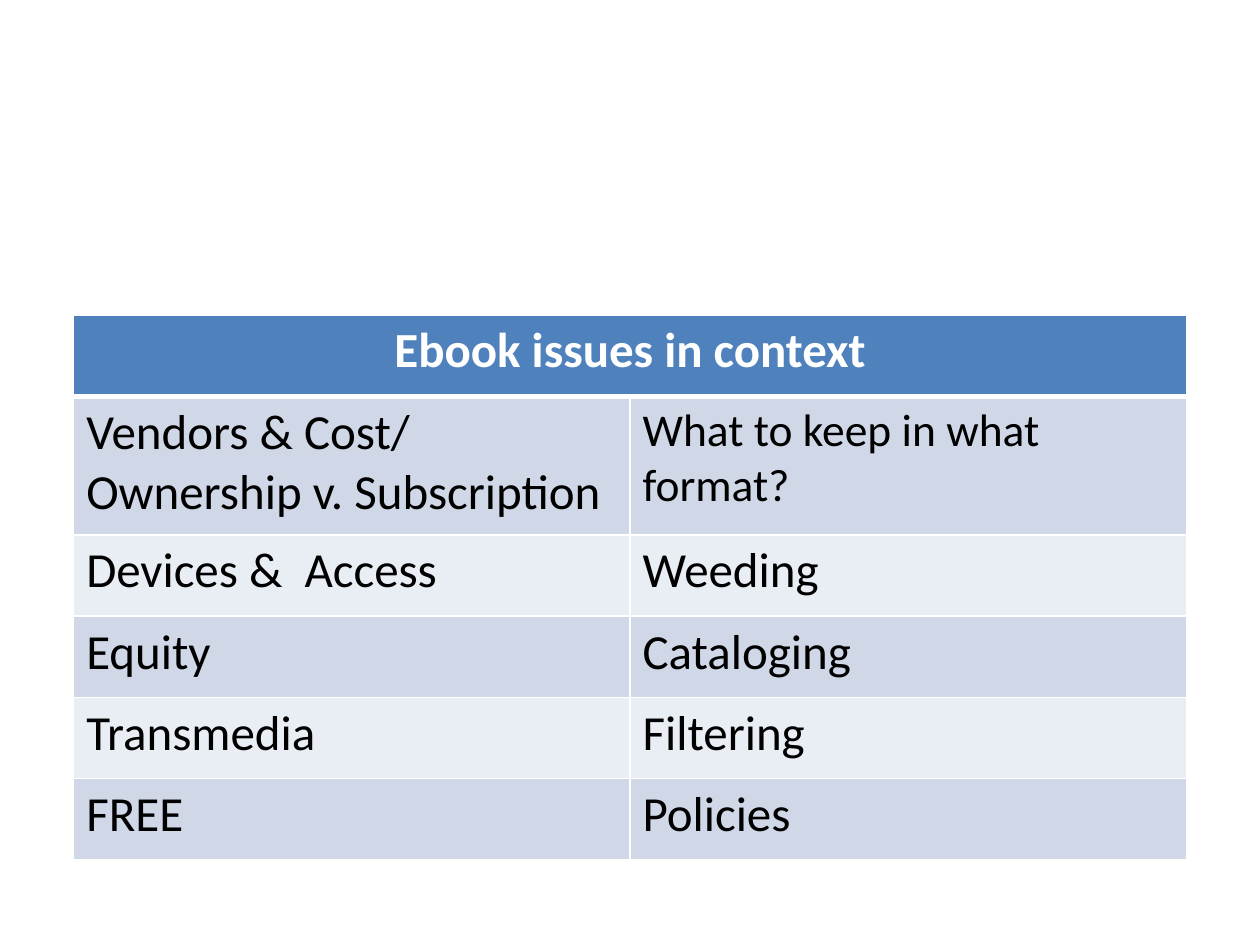
from dataclasses import dataclass

from lxml.etree import SubElement
from pptx import Presentation
from pptx.dml.color import RGBColor
from pptx.enum.text import PP_ALIGN as Align
from pptx.oxml.ns import qn
from pptx.table import _Cell as Cell
from pptx.util import Inches, Pt

WHITE = RGBColor(0xFF, 0xFF, 0xFF)
BLACK = RGBColor(0x00, 0x00, 0x00)
HEADER_BLUE = RGBColor(0x4F, 0x81, 0xBD)
BANDS = (RGBColor(0xD0, 0xD8, 0xE8), RGBColor(0xE9, 0xED, 0xF4))


@dataclass(frozen=True)
class Issue:
    text: str
    size: int = 28


@dataclass(frozen=True)
class CellStyle:
    fill: RGBColor
    color: RGBColor = BLACK
    bold: bool = False
    align: Align = Align.LEFT
    top: int = 1
    bottom: int = 1


HEADING = Issue("Ebook issues in context")
ISSUE_ROWS = (
    (Issue("Vendors & Cost/\nOwnership v. Subscription"),
     Issue("What to keep in what format?", 26)),
    (Issue("Devices &  Access"), Issue("Weeding")),
    (Issue("Equity"), Issue("Cataloging")),
    (Issue("Transmedia"), Issue("Filtering")),
    (Issue("FREE"), Issue("Policies")),
)
COLUMN_WIDTH = Inches(4.415)
ROW_HEIGHT = Inches(0.645)
TALL_ROW_HEIGHT = Inches(1.1)
TALL_ROW = 1


def draw_borders(cell: Cell, style: CellStyle) -> None:
    properties = cell._tc.get_or_add_tcPr()
    widths = {"a:lnL": 1, "a:lnR": 1, "a:lnT": style.top, "a:lnB": style.bottom}
    for side, width in widths.items():
        border = SubElement(properties, qn(side), w=str(Pt(width)))
        paint = SubElement(border, qn("a:solidFill"))
        SubElement(paint, qn("a:srgbClr"), val=str(WHITE))


def style_cell(cell: Cell, style: CellStyle) -> None:
    draw_borders(cell, style)
    cell.fill.solid()
    cell.fill.fore_color.rgb = style.fill


def write_issue(cell: Cell, issue: Issue, style: CellStyle) -> None:
    cell.text = issue.text
    font_format = {"name": "Calibri", "size": Pt(issue.size), "bold": style.bold}
    for paragraph in cell.text_frame.paragraphs:
        paragraph.alignment = style.align
        for run in paragraph.runs:
            for attribute, value in font_format.items():
                setattr(run.font, attribute, value)
            run.font.color.rgb = style.color


def main() -> None:
    presentation = Presentation()
    presentation.slide_width = Inches(10)
    presentation.slide_height = Inches(7.5)
    slide = presentation.slides.add_slide(presentation.slide_layouts[6])

    row_count = len(ISSUE_ROWS) + 1
    table_height = TALL_ROW_HEIGHT + (row_count - 1) * ROW_HEIGHT
    issues_table = slide.shapes.add_table(
        row_count, 2, Inches(0.585), Inches(2.5), 2 * COLUMN_WIDTH, table_height
    ).table
    for column in issues_table.columns:
        column.width = COLUMN_WIDTH
    for index, row in enumerate(issues_table.rows):
        row.height = TALL_ROW_HEIGHT if index == TALL_ROW else ROW_HEIGHT

    header_style = CellStyle(HEADER_BLUE, WHITE, True, Align.CENTER, bottom=3)
    heading_cell = issues_table.cell(0, 0)
    heading_cell.merge(issues_table.cell(0, 1))
    for cell in issues_table.rows[0].cells:
        style_cell(cell, header_style)
    write_issue(heading_cell, HEADING, header_style)

    for row_index, issues in enumerate(ISSUE_ROWS, start=1):
        band_style = CellStyle(
            BANDS[(row_index - 1) % 2], top=3 if row_index == 1 else 1
        )
        for column_index, issue in enumerate(issues):
            cell = issues_table.cell(row_index, column_index)
            style_cell(cell, band_style)
            write_issue(cell, issue, band_style)

    presentation.save("out.pptx")


if __name__ == "__main__":
    main()
